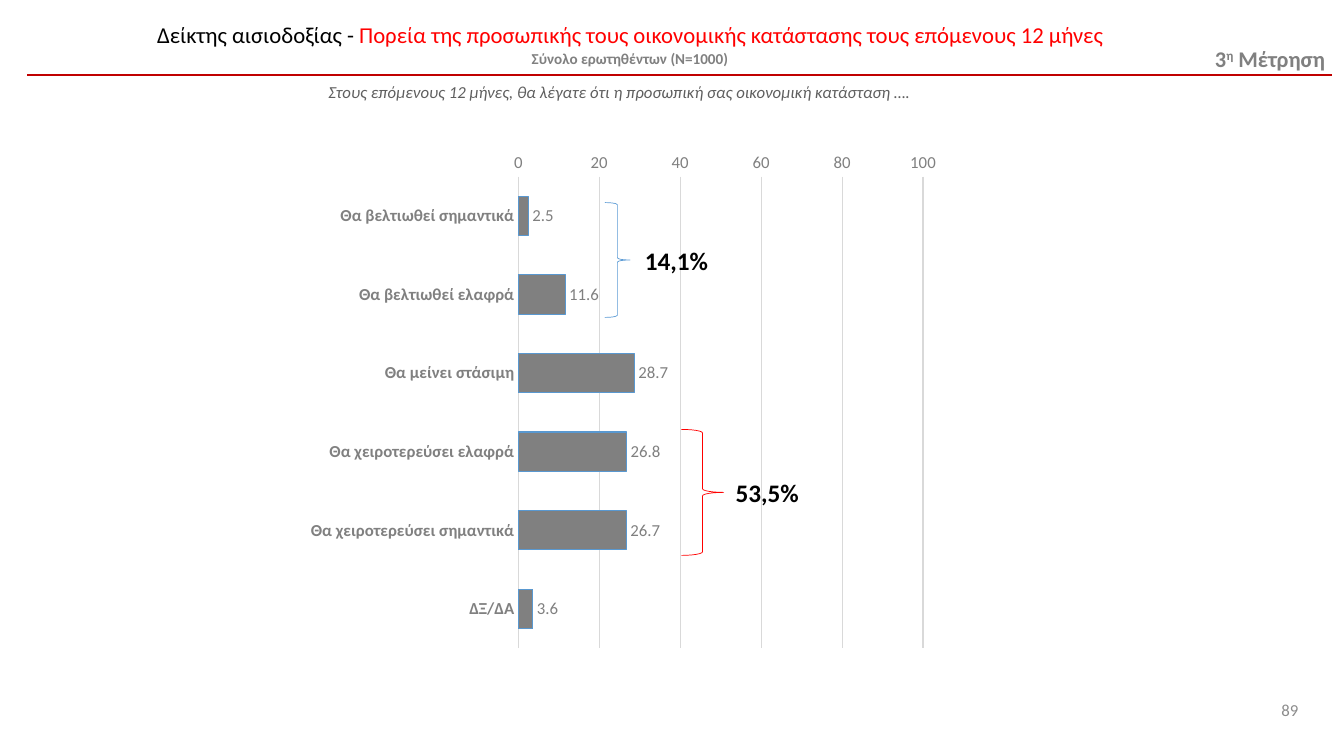
from copy import deepcopy

from lxml import etree
from pptx import Presentation
from pptx.chart.data import CategoryChartData
from pptx.dml.color import RGBColor
from pptx.enum.chart import XL_CHART_TYPE, XL_LABEL_POSITION, XL_TICK_MARK
from pptx.enum.shapes import MSO_CONNECTOR, MSO_SHAPE
from pptx.enum.text import MSO_ANCHOR, MSO_AUTO_SIZE, PP_ALIGN
from pptx.oxml import parse_xml
from pptx.oxml.ns import nsdecls, qn
from pptx.util import Pt

FONT = "Calibri"
BLACK = RGBColor(0x00, 0x00, 0x00)
RED = RGBColor(0xFF, 0x00, 0x00)
DARK_RED = RGBColor(0xC0, 0x00, 0x00)
GRAY = RGBColor(0x80, 0x80, 0x80)
QUESTION_GRAY = RGBColor(0x5F, 0x5F, 0x5F)
NUMBER_GRAY = RGBColor(0x8C, 0x8C, 0x8C)
GRID_GRAY = RGBColor(0xD9, 0xD9, 0xD9)
BAR_EDGE = RGBColor(0x59, 0x98, 0xD0)
BRACE_BLUE = RGBColor(0x5B, 0x9B, 0xD5)

ANSWERS = {
    "Θα βελτιωθεί σημαντικά": 2.5,
    "Θα βελτιωθεί ελαφρά": 11.6,
    "Θα μείνει στάσιμη": 28.7,
    "Θα χειροτερεύσει ελαφρά": 26.8,
    "Θα χειροτερεύσει σημαντικά": 26.7,
    "ΔΞ/ΔΑ": 3.6,
}


def style(font, size, color, bold=False, italic=False):
    font.name = FONT
    font.size = Pt(size)
    font.color.rgb = color
    font.bold = bold
    font.italic = italic


def add_label(slide, box, text, size, color, bold=False, italic=False, wrap=True):
    """Add a one-paragraph text box and return its paragraph."""
    frame = slide.shapes.add_textbox(*map(Pt, box)).text_frame
    frame.word_wrap = wrap
    paragraph = frame.paragraphs[0]
    paragraph.add_run().text = text
    style(paragraph.font, size, color, bold, italic)
    return paragraph


def add_title(slide, box):
    title = slide.shapes.title
    title.left, title.top, title.width, title.height = map(Pt, box)
    frame = title.text_frame
    frame.word_wrap = True
    frame.auto_size = MSO_AUTO_SIZE.NONE
    frame.vertical_anchor = MSO_ANCHOR.MIDDLE
    heading = frame.paragraphs[0]
    heading.alignment = PP_ALIGN.CENTER
    heading.line_spacing = 1.1

    def add_part(text, size, color, bold=False):
        part = heading.add_run()
        part.text = text
        style(part.font, size, color, bold)
        return part

    add_part("Δείκτης αισιοδοξίας - ", 16.2, BLACK)
    topic = add_part(
        "Πορεία της προσωπικής τους οικονομικής κατάστασης τους επόμενους 12 μήνες",
        16.2, RED)
    # The break takes the topic's size, so that it does not stretch the line
    heading.add_line_break()
    heading._p[-1].append(deepcopy(topic._r.rPr))
    add_part("Σύνολο ερωτηθέντων (N=1000)", 10.8, GRAY, bold=True)


def add_header(slide, box):
    left, top, width, height = box
    rule_y = top + height
    rule = slide.shapes.add_connector(
        MSO_CONNECTOR.STRAIGHT, *map(Pt, (left, rule_y, left + width, rule_y)))
    rule.line.color.rgb = DARK_RED
    rule.line.width = Pt(1.5)
    etree.SubElement(rule._element.spPr, qn("a:effectLst"))

    wave = add_label(slide, (left + width - 91, rule_y - 24.5, 98.6, 26.6),
                     "3", 16, GRAY, bold=True, wrap=False)
    ordinal = wave.add_run()
    ordinal.text = "η"
    ordinal._r.get_or_add_rPr().set("baseline", "30000")
    wave.add_run().text = " Μέτρηση"

    add_title(slide, (left + 70.6, top, 720, 61.2))
    add_label(slide, (left + 208, rule_y + 1.5, 533.5, 21.6),
              "Στους επόμενους 12 μήνες, θα λέγατε ότι η προσωπική σας "
              "οικονομική κατάσταση ….", 12, QUESTION_GRAY, italic=True)


def set_plot_layout(chart, x, y, w, h):
    """Fix the inner plot area, in fractions of the chart."""
    plot_area = chart._chartSpace.chart.plotArea
    for old in plot_area.findall(qn("c:layout")):
        plot_area.remove(old)
    plot_area.insert(0, parse_xml(
        f'<c:layout {nsdecls("c")}><c:manualLayout>'
        '<c:layoutTarget val="inner"/><c:xMode val="edge"/><c:yMode val="edge"/>'
        f'<c:x val="{x}"/><c:y val="{y}"/><c:w val="{w}"/><c:h val="{h}"/>'
        '</c:manualLayout></c:layout>'))


def add_answer_chart(slide, box):
    data = CategoryChartData()
    data.categories = list(ANSWERS)
    data.add_series("Series 1", list(ANSWERS.values()))
    chart = slide.shapes.add_chart(
        XL_CHART_TYPE.BAR_CLUSTERED, *map(Pt, box), data).chart
    chart.has_legend = False
    chart.has_title = False
    style(chart.font, 10, BLACK)
    set_plot_layout(chart, 0.527, 0.075, 0.436, 0.873)

    answers, percent = chart.category_axis, chart.value_axis
    for axis in (answers, percent):
        axis.major_tick_mark = axis.minor_tick_mark = XL_TICK_MARK.NONE
        style(axis.tick_labels.font, 12, GRAY, bold=axis is answers)
    answers.reverse_order = True
    percent.minimum_scale, percent.maximum_scale, percent.major_unit = 0, 100, 20
    percent.format.line.fill.background()
    for line in (answers.format.line, percent.major_gridlines.format.line):
        line.color.rgb = GRID_GRAY
        line.width = Pt(0.75)

    plot = chart.plots[0]
    plot.gap_width = 100
    plot.vary_by_categories = False
    bars = plot.series[0].format
    bars.fill.solid()
    bars.fill.fore_color.rgb = GRAY
    bars.line.color.rgb = BAR_EDGE
    bars.line.width = Pt(0.75)
    plot.has_data_labels = True
    values = plot.data_labels
    values.show_value = True
    values.position = XL_LABEL_POSITION.OUTSIDE_END
    style(values.font, 12, GRAY)


def add_braced_total(slide, box, total, color, gap):
    """Bracket a group of bars and write their total beside the tip."""
    left, top, width, height = box
    brace = slide.shapes.add_shape(MSO_SHAPE.RIGHT_BRACE, *map(Pt, box))
    brace.shadow.inherit = False
    brace.fill.background()
    brace.line.color.rgb = color
    brace.line.width = Pt(0.5)
    add_label(slide, (left + width + gap, top + height / 2 - 14.2, 82, 29),
              total, 18, BLACK, bold=True)


def add_page_number(slide, box):
    number = add_label(slide, box, "89", 12, NUMBER_GRAY)
    number.alignment = PP_ALIGN.RIGHT


def main():
    deck = Presentation()
    deck.slide_width, deck.slide_height = Pt(960), Pt(540)
    slide = deck.slides.add_slide(deck.slide_layouts[5])
    add_header(slide, (19.4, 0, 932.4, 53.3))
    add_answer_chart(slide, (20.9, 97.2, 663, 386))
    add_braced_total(slide, (432, 144.7, 18, 82), "14,1%", BRACE_BLUE, 3.6)
    add_braced_total(slide, (486.7, 306.7, 30.2, 90), "53,5%", RED, 1.5)
    add_page_number(slide, (888.5, 496, 46, 22))
    deck.save("out.pptx")


if __name__ == "__main__":
    main()
